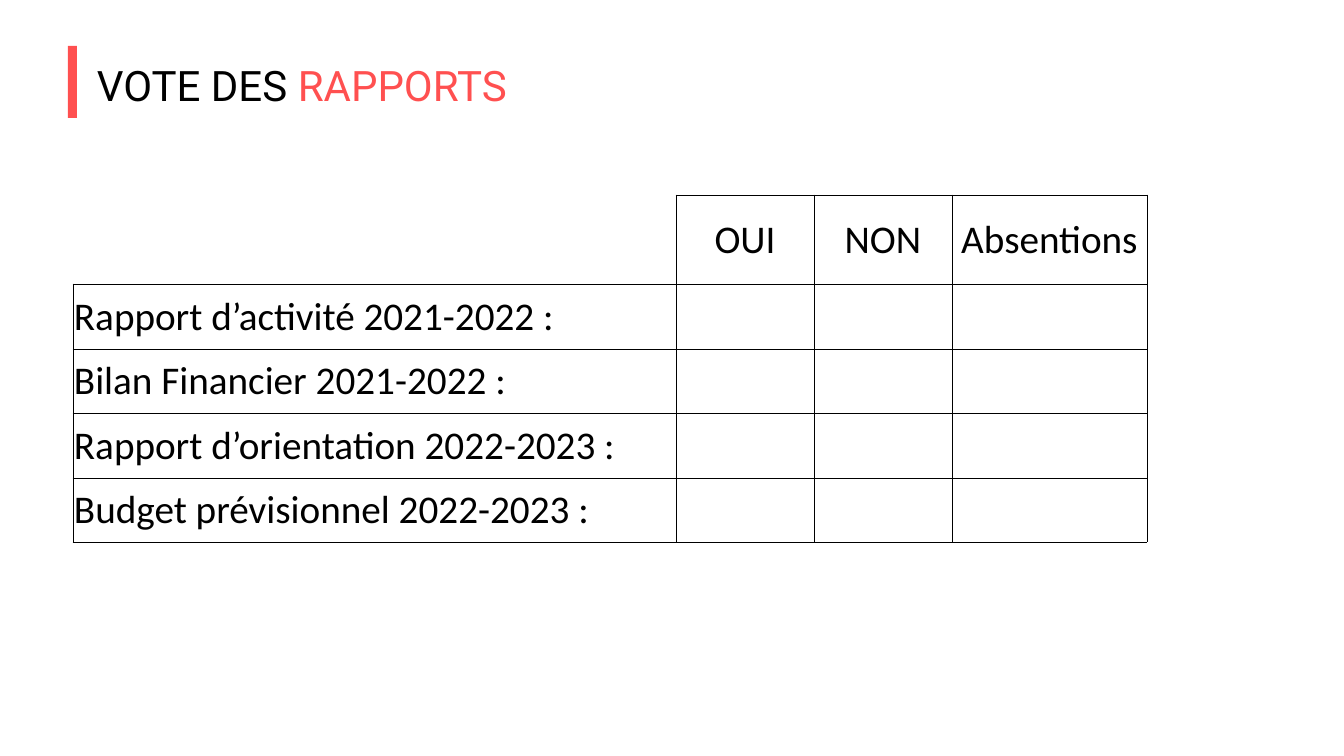
from dataclasses import dataclass

from lxml.etree import SubElement
from pptx import Presentation
from pptx.dml.color import RGBColor as RGB
from pptx.enum.shapes import MSO_SHAPE as SHAPE
from pptx.enum.text import MSO_ANCHOR as ANCHOR, PP_ALIGN as ALIGN
from pptx.oxml.ns import qn
from pptx.util import Emu, Pt


@dataclass(frozen=True)
class Theme:
    """Colours, fonts and type sizes of the slide."""
    ink: str = "000000"
    accent: str = "FF5050"
    title_font: str = "Roboto"
    table_font: str = "Calibri"
    title_size: int = 30
    table_size: int = 28
    border: float = 0.5


def px(n):
    """Turn whole pixels into EMU."""
    return Emu(round(n * 914400 / 100.8))


def add_run(p, text, font, size, color):
    """Add a formatted run to a paragraph."""
    r = p.add_run()
    r.text = text
    r.font.name, r.font.size, r.font.bold = font, Pt(size), False
    r.font.color.rgb = RGB.from_string(color)


class SlideBuilder:
    """Draws themed elements on one slide."""

    def __init__(self, slide, theme):
        """Keep the slide and its theme."""
        self.shapes, self.theme = slide.shapes, theme

    def title(self, x, y, w, h, parts):
        """Add a title made of (text, colour) parts."""
        tf = self.shapes.add_textbox(px(x), px(y), px(w), px(h)).text_frame
        tf.word_wrap = True
        tf.vertical_anchor = ANCHOR.MIDDLE
        p = tf.paragraphs[0]
        p.line_spacing = 1.2
        for text, color in parts:
            add_run(p, text, font=self.theme.title_font,
                    size=self.theme.title_size, color=color)

    def bar(self, x, y, w, h):
        """Add a solid accent bar."""
        sp = self.shapes.add_shape(SHAPE.RECTANGLE, px(x), px(y), px(w), px(h))
        sp.shadow.inherit = False
        sp.fill.solid()
        sp.fill.fore_color.rgb = RGB.from_string(self.theme.accent)
        sp.line.fill.background()

    def borders(self, cell, sides):
        """Draw the given sides of a cell and clear the others."""
        tc_pr = cell._tc.get_or_add_tcPr()
        for side in "LRTB":
            ln = SubElement(tc_pr, qn(f"a:ln{side}"), w=str(Pt(self.theme.border)))
            if side in sides:
                fill = SubElement(ln, qn("a:solidFill"))
                SubElement(fill, qn("a:srgbClr"), val=self.theme.ink)
            else:
                SubElement(ln, qn("a:noFill"))

    def table(self, x, y, widths, heights, rows):
        """Add a ruled table with an open top left corner."""
        frame = self.shapes.add_table(len(heights), len(widths), px(x), px(y),
                                      px(sum(widths)), px(sum(heights)))
        table = frame.table
        table.first_row = table.horz_banding = False
        for col, w in zip(table.columns, widths):
            col.width = px(w)
        for row, h in zip(table.rows, heights):
            row.height = px(h)
        for i, row in enumerate(rows):
            for j, text in enumerate(row):
                cell = table.cell(i, j)
                self.borders(cell, "LRTB" if i or j else "RB")
                cell.fill.background()
                cell.vertical_anchor = ANCHOR.MIDDLE
                cell.margin_left = cell.margin_right = cell.margin_top = px(1)
                cell.margin_bottom = 0
                if text:
                    p = cell.text_frame.paragraphs[0]
                    p.alignment = ALIGN.CENTER if j else ALIGN.LEFT
                    add_run(p, text, font=self.theme.table_font,
                            size=self.theme.table_size, color=self.theme.ink)


def main():
    """Build and save the voting slide."""
    prs = Presentation()
    prs.slide_width, prs.slide_height = px(1344), px(756)
    theme = Theme()
    s = SlideBuilder(prs.slides.add_slide(prs.slide_layouts[6]), theme)

    s.title(87, 42, 1257, 76, [("VOTE DES ", theme.ink), ("RAPPORTS", theme.accent)])
    s.bar(68, 46, 9, 72)

    votes = ["OUI", "NON", "Absentions"]
    reports = [
        "Rapport d’activité 2021-2022 :",
        "Bilan Financier 2021-2022 :",
        "Rapport d’orientation 2022-2023 :",
        "Budget prévisionnel 2022-2023 :",
    ]
    rows = [["", *votes]] + [[report] + [""] * len(votes) for report in reports]
    s.table(73, 195, [603, 138, 138, 195], [89] + [65, 64] * 2, rows)

    prs.save("out.pptx")


if __name__ == "__main__":
    main()
